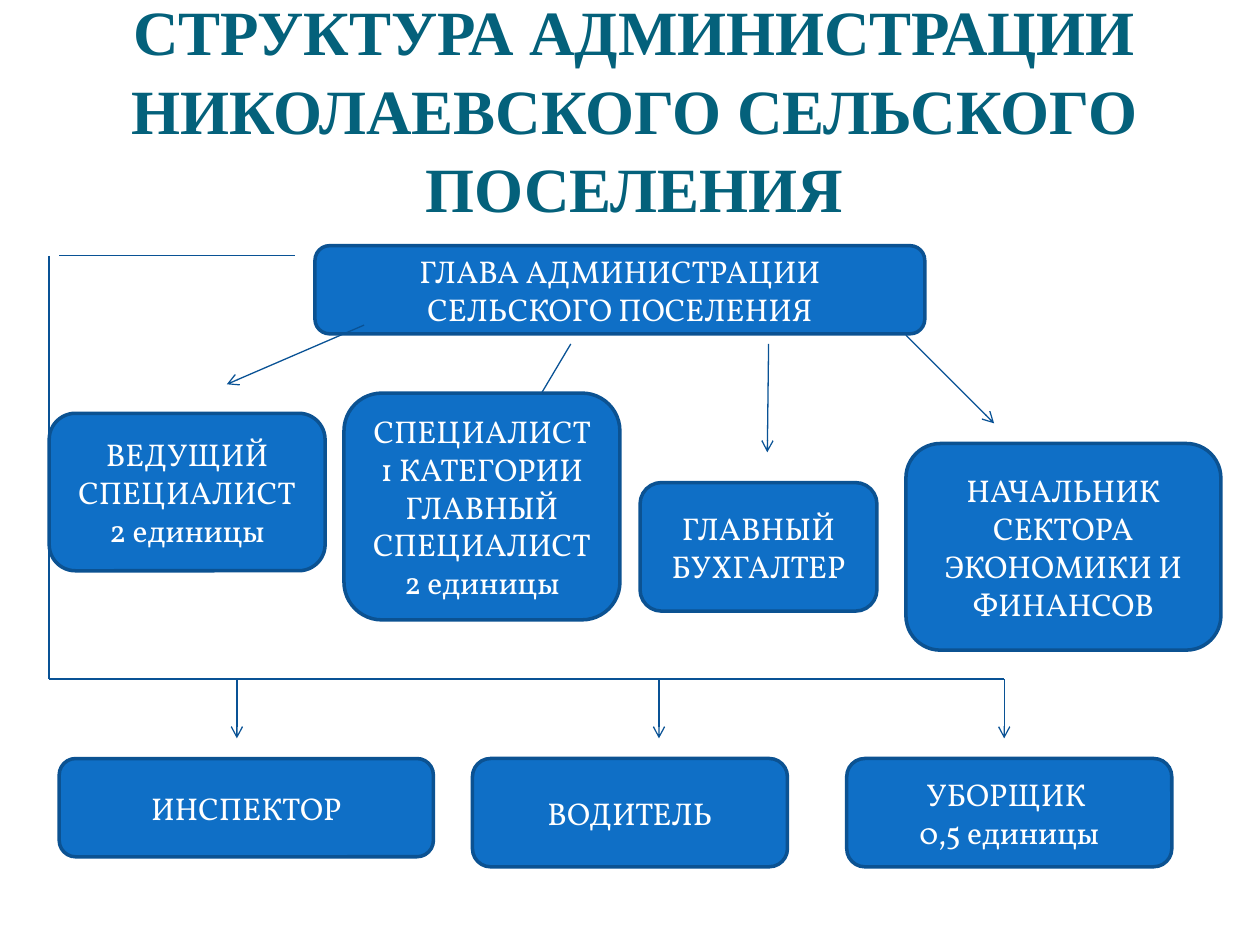
from pptx import Presentation
from pptx.dml.color import RGBColor
from pptx.enum.shapes import MSO_CONNECTOR, MSO_SHAPE
from pptx.enum.text import MSO_ANCHOR, PP_ALIGN
from pptx.oxml.ns import qn
from pptx.util import Inches, Pt
from lxml import etree

ROUNDED = MSO_SHAPE.ROUNDED_RECTANGLE
STRAIGHT = MSO_CONNECTOR.STRAIGHT
MIDDLE, BOTTOM = MSO_ANCHOR.MIDDLE, MSO_ANCHOR.BOTTOM
CENTER = PP_ALIGN.CENTER


def color(value):
    return RGBColor.from_string(value)


def write(shape, text, font="Vollkorn", size=18, ink="FFFFFF", bold=False,
          anchor=MIDDLE, spacing=1.0):
    frame = shape.text_frame
    frame.word_wrap = True
    frame.vertical_anchor = anchor
    frame.text = text
    for para in frame.paragraphs:
        para.alignment = CENTER
        para.line_spacing = spacing
        para.font.name = font
        para.font.size = Pt(size)
        para.font.bold = bold
        para.font.color.rgb = color(ink)
        for span in para.runs:
            span.font.name = font
            span.font.size = Pt(size)
            span.font.bold = bold
            span.font.color.rgb = color(ink)


deck = Presentation()
deck.slide_width, deck.slide_height = Inches(10), Inches(7.5)
page = deck.slides.add_slide(deck.slide_layouts[6])

title = page.shapes.add_textbox(Inches(0.31), Inches(-0.16), Inches(9.45), Inches(1.95))
write(title, "СТРУКТУРА АДМИНИСТРАЦИИ НИКОЛАЕВСКОГО СЕЛЬСКОГО ПОСЕЛЕНИЯ",
      font="Times New Roman", size=36, ink="04617B", bold=True, anchor=BOTTOM, spacing=1.04)
title.text_frame.margin_left = title.text_frame.margin_right = 0
title.text_frame.margin_bottom = 0

rail_x, rail_top, rail_y = 0.39, 2.03, 5.39
middle_x, right_x, arrow_end = 5.23, 7.97, 5.86
staff_top = 6.02

head = [("ГЛАВА АДМИНИСТРАЦИИ СЕЛЬСКОГО ПОСЕЛЕНИЯ", 2.5, 1.95, 4.84, 0.7)]
head_arrows = [
    (2.89, 2.58, 1.8, 3.05, True),
    (4.53, 2.73, 4.06, 3.52, True),
    (6.1, 2.73, 6.09, 3.59, True),
    (7.19, 2.66, 7.89, 3.36, True),
]
specialists = [
    ("ВЕДУЩИЙ СПЕЦИАЛИСТ\n2 единицы", 0.39, 3.28, 2.19, 1.25),
    ("СПЕЦИАЛИСТ 1 КАТЕГОРИИ ГЛАВНЫЙ СПЕЦИАЛИСТ\v2 единицы", 2.73, 3.12, 2.19, 1.8),
    ("ГЛАВНЫЙ БУХГАЛТЕР", 5.08, 3.83, 1.88, 1.02),
    ("НАЧАЛЬНИК СЕКТОРА ЭКОНОМИКИ И ФИНАНСОВ", 7.19, 3.52, 2.5, 1.64),
]
rails = [
    (2.34, rail_top, 0.47, rail_top, False),
    (rail_x, rail_top, rail_x, rail_y, False),
    (rail_x, rail_y, middle_x, rail_y, False),
    (middle_x, rail_y, right_x, rail_y, False),
]
staff_arrows = [(x, rail_y, x, arrow_end, True) for x in (1.88, middle_x, right_x)]
staff = [
    ("ИНСПЕКТОР", 0.47, staff_top, 2.97, 0.78),
    ("ВОДИТЕЛЬ", 3.75, staff_top, 2.5, 0.86),
    ("УБОРЩИК \n0,5 единицы", 6.72, staff_top, 2.58, 0.86),
]

for boxes, lines in ((head, head_arrows), (specialists, rails + staff_arrows), (staff, [])):
    for text, *bounds in boxes:
        box = page.shapes.add_shape(ROUNDED, *map(Inches, bounds))
        box.shadow.inherit = False
        box.fill.solid()
        box.fill.fore_color.rgb = color("0F6FC6")
        box.line.color.rgb = color("0B5292")
        box.line.width = Pt(2)
        write(box, text)
    for *ends, has_arrow in lines:
        link = page.shapes.add_connector(STRAIGHT, *map(Inches, ends))
        link.line.color.rgb = color("095295")
        link.line.width = Pt(0.75)
        if has_arrow:
            etree.SubElement(link.line._get_or_add_ln(), qn("a:tailEnd"), type="arrow")
        etree.SubElement(link._element.spPr, qn("a:effectLst"))

deck.save("out.pptx")
